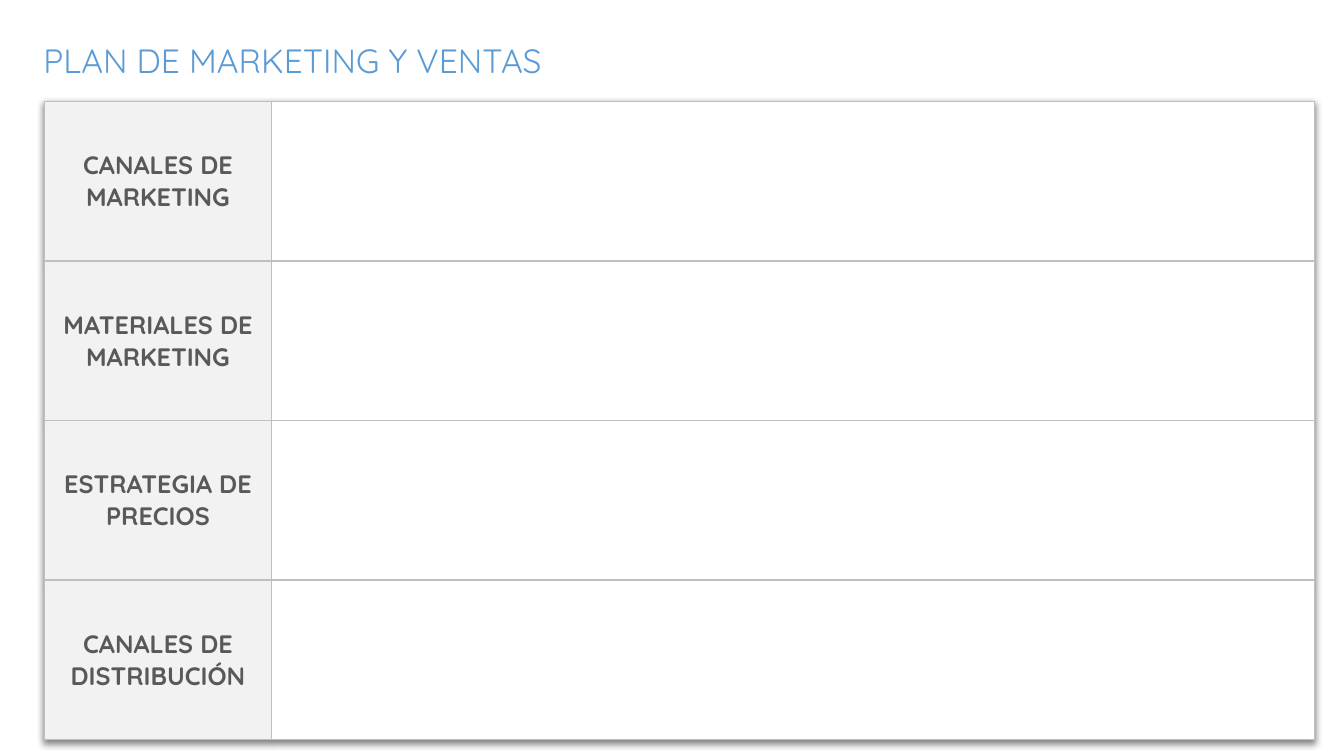
from lxml.etree import SubElement
from pptx import Presentation
from pptx.dml.color import RGBColor
from pptx.enum.text import MSO_ANCHOR as Anchor, PP_ALIGN as Align
from pptx.oxml import parse_xml
from pptx.oxml.ns import nsdecls, qn
from pptx.util import Cm, Pt

FONT = "Quicksand"
BLUE = RGBColor(0x5B, 0x9B, 0xD5)
DARK_GRAY = RGBColor(0x59, 0x59, 0x59)
BORDER_GRAY = RGBColor(0xBF, 0xBF, 0xBF)
LIGHT_GRAY = RGBColor(0xF2, 0xF2, 0xF2)
WHITE = RGBColor(0xFF, 0xFF, 0xFF)

TITLE = "PLAN DE MARKETING Y VENTAS"
TOPICS = [
    "CANALES DE MARKETING",
    "MATERIALES DE MARKETING",
    "ESTRATEGIA DE PRECIOS",
    "CANALES DE DISTRIBUCIÓN",
]
COLUMN_WIDTHS = [Cm(5.72), Cm(26.28)]
ROW_HEIGHT = Cm(4.02)


def write_text(text_frame, text, *, size, color, bold=False, align=Align.LEFT):
    paragraph = text_frame.paragraphs[0]
    paragraph.alignment = align
    run = paragraph.add_run()
    run.text = text
    run.font.name = FONT
    run.font.size = Pt(size)
    run.font.bold = bold
    run.font.color.rgb = color


def place_title(slide, text):
    title = slide.shapes.title
    title.left, title.top = Cm(0.84), Cm(0.89)
    title.width, title.height = Cm(20.52), Cm(1.27)
    title.text_frame.word_wrap = True
    title.text_frame.vertical_anchor = Anchor.MIDDLE
    write_text(title.text_frame, text, size=24, color=BLUE)


def add_borders(cell, color, width):
    properties = cell._tc.get_or_add_tcPr()
    for position, side in enumerate(("lnL", "lnR", "lnT", "lnB")):
        line = parse_xml(f'<a:{side} {nsdecls("a")} w="{width}"/>')
        fill = SubElement(line, qn("a:solidFill"))
        SubElement(fill, qn("a:srgbClr"), val=str(color))
        properties.insert(position, line)


def add_table_shadow(table):
    effects = parse_xml(
        f'<a:effectLst {nsdecls("a")}>'
        f'<a:outerShdw blurRad="{Pt(4)}" dist="{Pt(2)}" dir="5400000" algn="t" rotWithShape="0">'
        '<a:srgbClr val="000000"><a:alpha val="50000"/></a:srgbClr>'
        '</a:outerShdw></a:effectLst>'
    )
    table._tbl.tblPr.insert(0, effects)


def add_plan_table(slide, topics):
    frame = slide.shapes.add_table(
        len(topics), len(COLUMN_WIDTHS), Cm(1.12), Cm(2.56),
        sum(COLUMN_WIDTHS), ROW_HEIGHT * len(topics),
    )
    table = frame.table
    table.first_row = False
    table.horz_banding = False
    add_table_shadow(table)
    for column, width in zip(table.columns, COLUMN_WIDTHS):
        column.width = width
    for row, topic in zip(table.rows, topics):
        row.height = ROW_HEIGHT
        for cell, color in zip(row.cells, (LIGHT_GRAY, WHITE)):
            cell.vertical_anchor = Anchor.MIDDLE
            cell.fill.solid()
            cell.fill.fore_color.rgb = color
            add_borders(cell, BORDER_GRAY, Pt(1))
        write_text(row.cells[0].text_frame, topic, size=18, color=DARK_GRAY,
                   bold=True, align=Align.CENTER)


def main():
    presentation = Presentation()
    presentation.slide_width, presentation.slide_height = Cm(33.87), Cm(19.05)
    title_only = presentation.slide_layouts.get_by_name("Title Only")
    slide = presentation.slides.add_slide(title_only)
    place_title(slide, TITLE)
    add_plan_table(slide, TOPICS)
    presentation.save("out.pptx")


if __name__ == "__main__":
    main()
